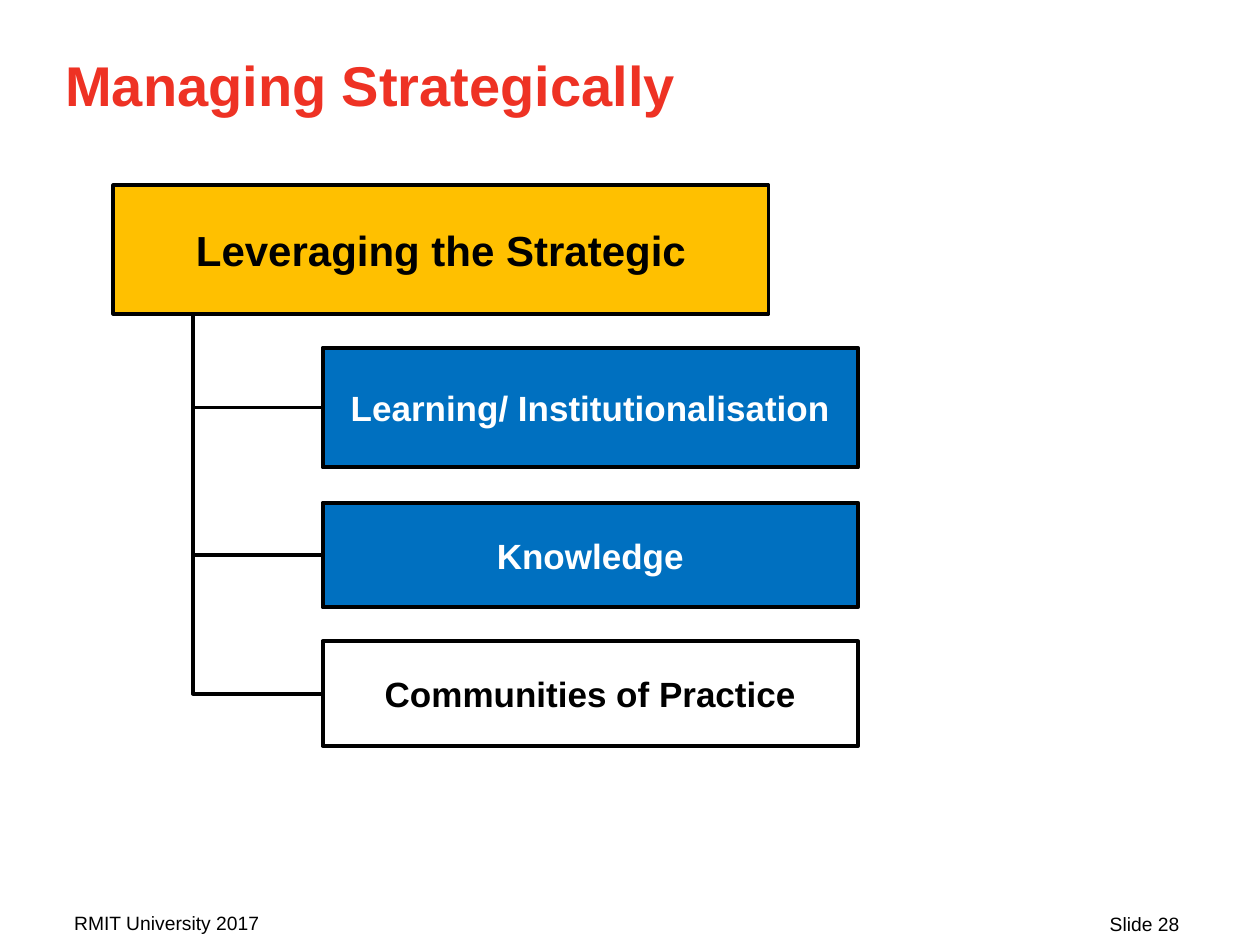
"""Build a slide with a strategy hierarchy of one parent box and three branches."""
import pptx
import pptx.dml.color
import pptx.enum.shapes
import pptx.enum.text
import pptx.oxml
import pptx.oxml.ns
import pptx.util

Pt = pptx.util.Pt
ALIGN = pptx.enum.text.PP_ALIGN
ANCHOR = pptx.enum.text.MSO_ANCHOR
COLOURS = {
    "red": "EE3224",
    "amber": "FFC000",
    "blue": "0070C0",
    "black": "000000",
    "white": "FFFFFF",
}
PARENT = (64.8, 105.84, 374.4, 73.44)
CHILD_LEFT, CHILD_WIDTH = 184.32, 306
TRUNK_X = 110.3
CHILDREN = [
    ("Learning/ Institutionalisation", 198.72, 68.4, "blue", "white"),
    ("Knowledge", 287.28, 59.76, "blue", "white"),
    ("Communities of Practice", 366.48, 59.76, None, "black"),
]


def rgb(name):
    return pptx.dml.color.RGBColor.from_string(COLOURS[name])


def write_text(shape, text, size=11, colour="black", bold=False,
               align=ALIGN.LEFT, anchor=ANCHOR.TOP, top_margin=3.6):
    frame = shape.text_frame
    frame.word_wrap = True
    frame.vertical_anchor = anchor
    frame.margin_top = Pt(top_margin)
    paragraph = frame.paragraphs[0]
    paragraph.alignment = align
    run = paragraph.add_run()
    run.text = text
    run.font.name = "Arial"
    run.font.size = Pt(size)
    run.font.bold = bold
    run.font.color.rgb = rgb(colour)


def add_label(slide, bounds, text, **text_format):
    shape = slide.shapes.add_textbox(*map(Pt, bounds))
    write_text(shape, text, **text_format)


def style_line(line):
    line.color.rgb = rgb("black")
    line.width = Pt(2.25)


def add_box(slide, bounds, text, fill, **text_format):
    kind = pptx.enum.shapes.MSO_SHAPE.RECTANGLE
    shape = slide.shapes.add_shape(kind, *map(Pt, bounds))
    shape.shadow.inherit = False
    if fill:
        shape.fill.solid()
        shape.fill.fore_color.rgb = rgb(fill)
    else:
        shape.fill.background()
    style_line(shape.line)
    write_text(shape, text, bold=True, align=ALIGN.CENTER,
               anchor=ANCHOR.MIDDLE, **text_format)


def add_branch(slide, start, end):
    kind = pptx.enum.shapes.MSO_CONNECTOR.ELBOW
    connector = slide.shapes.add_connector(kind, *map(Pt, start + end))
    style_line(connector.line)
    properties = connector._element.spPr
    geometry = properties.find(pptx.oxml.ns.qn("a:prstGeom"))
    adjustments = geometry.get_or_add_avLst()
    guide = pptx.oxml.parse_xml(
        f'<a:gd {pptx.oxml.ns.nsdecls("a")} name="adj1" fmla="val 0"/>')
    adjustments.append(guide)
    properties.append(pptx.oxml.parse_xml(
        f'<a:effectLst {pptx.oxml.ns.nsdecls("a")}/>'))


def main():
    presentation = pptx.Presentation()
    presentation.slide_width, presentation.slide_height = Pt(720), Pt(540)
    slide = presentation.slides.add_slide(presentation.slide_layouts[6])

    add_label(slide, (30.24, 21.6, 648, 72.72), "Managing Strategically",
              size=32, colour="red", bold=True, top_margin=7.5)
    add_label(slide, (513.36, 517.68, 167.76, 17.28), "Slide 28",
              align=ALIGN.RIGHT)
    add_label(slide, (35.28, 516.96, 167.76, 17.28), "RMIT University 2017")

    add_box(slide, PARENT, "Leveraging the Strategic", "amber", size=24)
    trunk_top = PARENT[1] + PARENT[3]
    for text, top, height, fill, colour in CHILDREN:
        add_box(slide, (CHILD_LEFT, top, CHILD_WIDTH, height), text, fill,
                size=20, colour=colour)
        add_branch(slide, (TRUNK_X, trunk_top), (CHILD_LEFT, top + height / 2))

    presentation.save("out.pptx")


if __name__ == "__main__":
    main()
